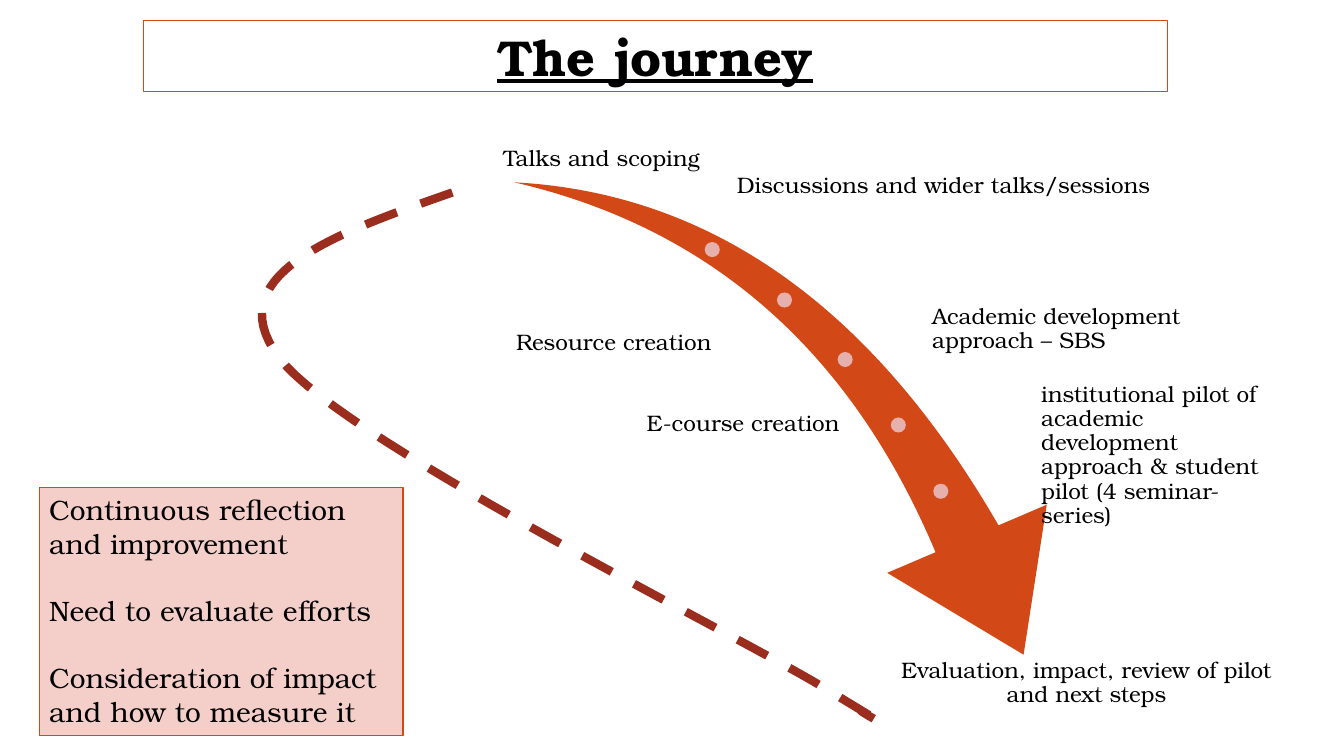
from dataclasses import dataclass

from pptx import Presentation
from pptx import util as u
from pptx.dml.color import RGBColor
from pptx.enum import dml, shapes, text


@dataclass(frozen=True)
class Theme:
    """Colours, font and type sizes of the slide."""
    font: str = "TeX Gyre Bonum"
    ink: str = "000000"
    paper: str = "FFFFFF"
    accent: str = "D34817"
    dot: str = "E6B1AC"
    trail: str = "9B2D1F"
    panel: str = "F4CEC9"
    title: int = 36
    body: int = 20
    label: int = 16


THEME = Theme()
SHAPE = shapes.MSO_SHAPE
LEFT, CENTER, RIGHT = text.PP_ALIGN.LEFT, text.PP_ALIGN.CENTER, text.PP_ALIGN.RIGHT
TOP, MIDDLE, BOTTOM = text.MSO_ANCHOR.TOP, text.MSO_ANCHOR.MIDDLE, text.MSO_ANCHOR.BOTTOM

DOT_SIZE = 0.38
DOT_CENTRES = [(17.95, 6.29), (19.77, 7.56), (21.3, 9.06), (22.64, 10.71), (23.71, 12.38)]

LABELS = [
    ("Talks and scoping", (11.61, 1.57, 7.11, 2.79), CENTER, BOTTOM),
    ("Discussions and wider talks/sessions", (18.52, 3.3, 10.77, 2.79), LEFT, MIDDLE),
    ("Resource creation", (11.63, 7.26, 6.35, 2.79), RIGHT, MIDDLE),
    ("Academic development approach – SBS", (23.44, 6.91, 7.49, 2.79), LEFT, MIDDLE),
    ("E-course creation", (11.61, 9.3, 9.6, 2.79), RIGHT, MIDDLE),
    ("institutional pilot of academic development approach & student pilot "
     "(4 seminar-series)", (26.19, 9.98, 6.2, 3), LEFT, MIDDLE),
    ("Evaluation, impact, review of pilot and next steps",
     (22.58, 16.56, 9.6, 1.6), CENTER, TOP),
]

TRAIL_START = (11.4, 4.85)
TRAIL_CURVES = [
    ((8.43, 5.89), (5.46, 6.93), (7.04, 9.02)),
    ((8.59, 11.07), (18.31, 15.85), (20.75, 17.32)),
    ((23.22, 18.82), (21.51, 17.78), (21.72, 17.93)),
    ((21.92, 18.06), (21.97, 18.08), (22.02, 18.11)),
]

REFLECTIONS = [
    "Continuous reflection and improvement",
    "Need to evaluate efforts",
    "Consideration of impact and how to measure it",
]


def cm(values):
    """Turn numbers into centimetre lengths."""
    return [u.Cm(v) for v in values]


def rgb(value):
    """Turn a hex string into a colour."""
    return RGBColor.from_string(value)


def write(p, words, size, align=LEFT):
    """Put words in a paragraph and style it."""
    p.text = words
    p.alignment = align
    p.font.name = THEME.font
    p.font.size = u.Pt(size)
    p.font.color.rgb = rgb(THEME.ink)


def add_solid(s, kind, box, fill, line=None):
    """Add a filled preset shape, outlined if a line colour is given."""
    sp = s.shapes.add_shape(kind, *cm(box))
    sp.shadow.inherit = False
    sp.fill.solid()
    sp.fill.fore_color.rgb = rgb(fill)
    if line:
        sp.line.color.rgb = rgb(line)
        sp.line.width = u.Pt(1)
    else:
        sp.line.fill.background()
    return sp


def add_panel(s, box, fill, paragraphs, size, align=LEFT, gap=0):
    """Add an outlined box of paragraphs and return its text frame."""
    tf = add_solid(s, SHAPE.RECTANGLE, box, fill, THEME.accent).text_frame
    tf.word_wrap = True
    tf.auto_size = text.MSO_AUTO_SIZE.SHAPE_TO_FIT_TEXT
    tf.vertical_anchor = TOP
    for i, words in enumerate(paragraphs):
        p = tf.add_paragraph() if i else tf.paragraphs[0]
        write(p, words, size, align)
        if i:
            p.space_before = u.Pt(gap)
    return tf


def add_label(s, words, box, align, anchor):
    """Add a milestone label."""
    tf = s.shapes.add_textbox(*cm(box)).text_frame
    tf.word_wrap = True
    tf.vertical_anchor = anchor
    tf.margin_left = tf.margin_right = tf.margin_top = tf.margin_bottom = u.Cm(0.05)
    p = tf.paragraphs[0]
    write(p, words, THEME.label, align)
    p.line_spacing = 0.9


def add_arrow(s):
    """Add the sweeping arrow with its milestone dots."""
    sp = add_solid(s, SHAPE.SWOOSH_ARROW, (12.62, 5.05, 15.09, 10.52), THEME.accent)
    sp.rotation = 73.3
    sp.adjustments[0], sp.adjustments[1] = 0.163, 0.314
    for x, y in DOT_CENTRES:
        box = (x - DOT_SIZE / 2, y - DOT_SIZE / 2, DOT_SIZE, DOT_SIZE)
        add_solid(s, SHAPE.OVAL, box, THEME.dot)


def bezier(a, b, c, d, steps=30):
    """Return points along a cubic curve, without its start."""
    ts = [i / steps for i in range(1, steps + 1)]
    return [
        tuple((1 - t) ** 3 * m + 3 * (1 - t) ** 2 * t * n
              + 3 * (1 - t) * t ** 2 * o + t ** 3 * q
              for m, n, o, q in zip(a, b, c, d))
        for t in ts
    ]


def add_trail(s):
    """Add the dashed curve that feeds back to the start."""
    points, start = [], TRAIL_START
    for b, c, d in TRAIL_CURVES:
        points += bezier(start, b, c, d)
        start = d
    builder = s.shapes.build_freeform(*cm(TRAIL_START))
    builder.add_line_segments([cm(pt) for pt in points], close=False)
    sp = builder.convert_to_shape()
    sp.shadow.inherit = False
    sp.fill.background()
    sp.line.color.rgb = rgb(THEME.trail)
    sp.line.width = u.Pt(6)
    sp.line.dash_style = dml.MSO_LINE.DASH


def main():
    """Build and save the slide."""
    prs = Presentation()
    prs.slide_width, prs.slide_height = cm((33.87, 19.05))
    s = prs.slides.add_slide(prs.slide_layouts[6])
    add_arrow(s)
    for label in LABELS:
        add_label(s, *label)
    tf = add_panel(s, (3.61, 0.51, 25.81, 1.8), THEME.paper, ["The journey"],
                   THEME.title, CENTER)
    tf.vertical_anchor = MIDDLE
    tf.paragraphs[0].font.bold = True
    tf.paragraphs[0].font.underline = True
    add_trail(s)
    add_panel(s, (0.99, 12.29, 9.17, 6.25), THEME.panel, REFLECTIONS,
              THEME.body, gap=24)
    prs.save("out.pptx")


if __name__ == "__main__":
    main()
